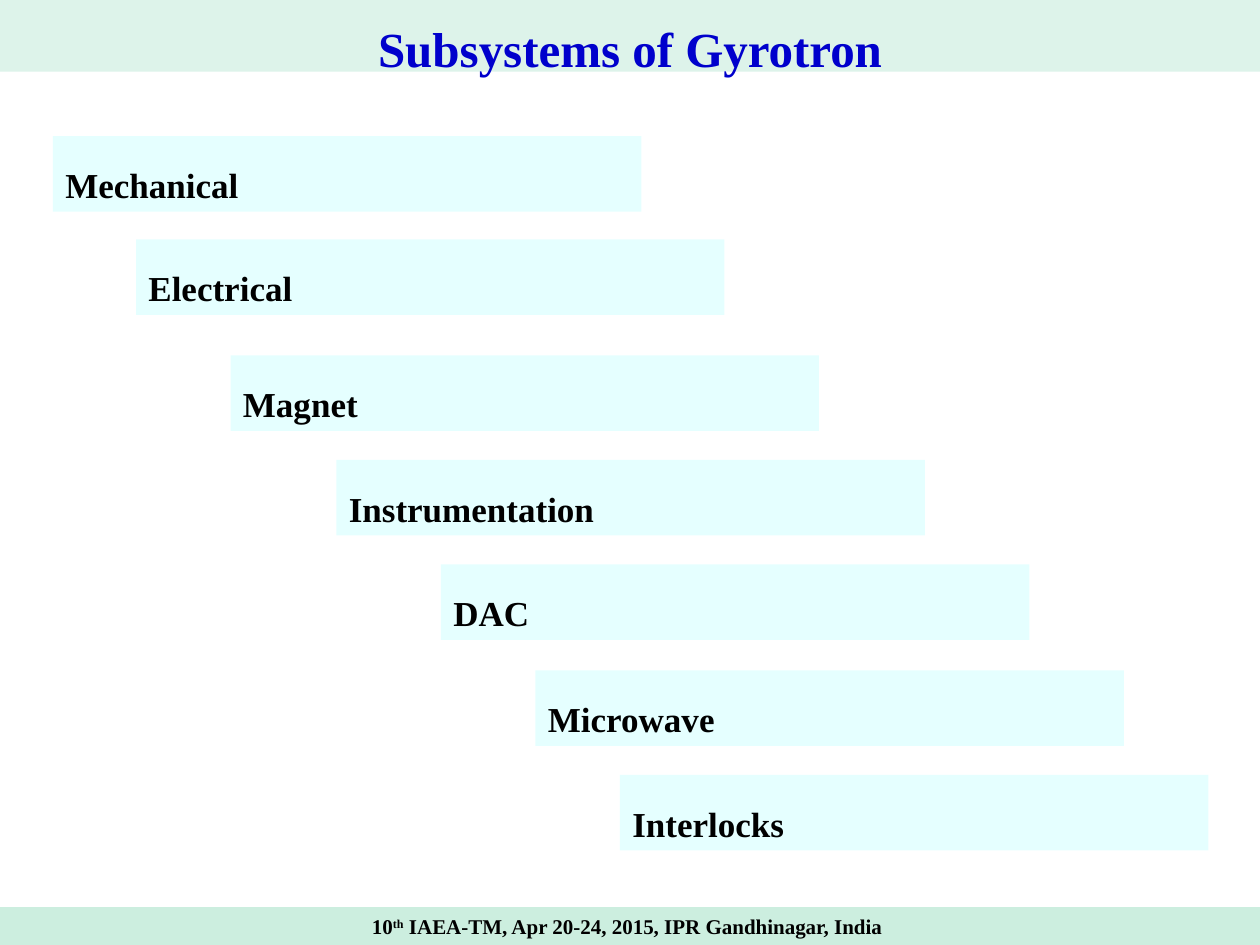
from lxml.etree import SubElement
from pptx import Presentation
from pptx.dml.color import RGBColor
from pptx.enum.shapes import MSO_SHAPE
from pptx.enum.text import MSO_ANCHOR, MSO_AUTO_SIZE, PP_ALIGN
from pptx.oxml.ns import qn
from pptx.util import Inches, Pt

BLACK = RGBColor(0x00, 0x00, 0x00)
BLUE = RGBColor(0x00, 0x00, 0xCC)
CYAN = RGBColor(0xCC, 0xFF, 0xFF)
MINT = RGBColor(0xCC, 0xEE, 0xDF)
PALE_MINT = RGBColor(0xDD, 0xF3, 0xEA)
FONT = "Times New Roman"

# Content
TITLE = "Subsystems of Gyrotron"
FOOTER = [("10", 0), ("th", 30), (" IAEA-TM, Apr 20-24, 2015, IPR Gandhinagar, India ", 0)]
# Subsystem, left, top: the steps of the staircase are uneven
SUBSYSTEMS = [
    ("Mechanical", 0.42, 1.08),
    ("Electrical", 1.08, 1.9),
    ("Magnet", 1.83, 2.82),
    ("Instrumentation", 2.67, 3.65),
    ("DAC", 3.5, 4.48),
    ("Microwave", 4.25, 5.32),
    ("Interlocks", 4.92, 6.15),
]
STEP_WIDTH, STEP_HEIGHT = 4.67, 0.6


def add_bar(slide, box, fill, runs, size, color=BLACK, align=PP_ALIGN.LEFT,
            line_spacing=None, space_before=None, margins=None):
    """Add a filled bar with one paragraph; runs are (text, baseline percent)."""
    bar = slide.shapes.add_shape(MSO_SHAPE.RECTANGLE, *map(Inches, box))
    bar.shadow.inherit = False
    bar.line.fill.background()
    bar.fill.solid()
    bar.fill.fore_color.rgb = fill

    frame = bar.text_frame
    frame_format = {"word_wrap": True, "vertical_anchor": MSO_ANCHOR.TOP,
                    "auto_size": MSO_AUTO_SIZE.SHAPE_TO_FIT_TEXT}
    if margins:
        across, down = map(Inches, margins)
        frame_format.update(margin_left=across, margin_right=across,
                            margin_top=down, margin_bottom=down)
    for name, value in frame_format.items():
        setattr(frame, name, value)

    paragraph = frame.paragraphs[0]
    paragraph.alignment = align
    if line_spacing:
        paragraph.line_spacing = line_spacing
    if space_before:
        # Spacing relative to the text size
        before = SubElement(paragraph._p.get_or_add_pPr(), qn("a:spcBef"))
        SubElement(before, qn("a:spcPct")).set("val", str(space_before * 1000))
    for text, baseline in runs:
        run = paragraph.add_run()
        run.text = text
        for name, value in {"name": FONT, "size": Pt(size), "bold": True}.items():
            setattr(run.font, name, value)
        run.font.color.rgb = color
        if baseline:
            run._r.get_or_add_rPr().set("baseline", str(baseline * 1000))
    return bar


def set_opacity(shape, percent):
    color = shape.fill._xPr.find(qn("a:solidFill"))[0]
    SubElement(color, qn("a:alpha")).set("val", str(percent * 1000))


def main():
    prs = Presentation()
    prs.slide_width, prs.slide_height = Inches(10), Inches(7.5)
    slide = prs.slides.add_slide(prs.slide_layouts[6])

    # Staircase of subsystems
    for subsystem, left, top in SUBSYSTEMS:
        step = add_bar(slide, (left, top, STEP_WIDTH, STEP_HEIGHT), CYAN,
                       [(subsystem, 0)], 20, line_spacing=1.5, space_before=50)
        set_opacity(step, 50)

    # Footer and title bands
    add_bar(slide, (0, 7.2, 10, 0.3), MINT, FOOTER, 12,
            align=PP_ALIGN.CENTER, space_before=50)
    add_bar(slide, (0, 0, 10, 0.57), PALE_MINT, [(TITLE, 0)], 28, color=BLUE,
            align=PP_ALIGN.CENTER, line_spacing=1.3, margins=(0.02, 0.01))

    prs.save("out.pptx")


if __name__ == "__main__":
    main()
